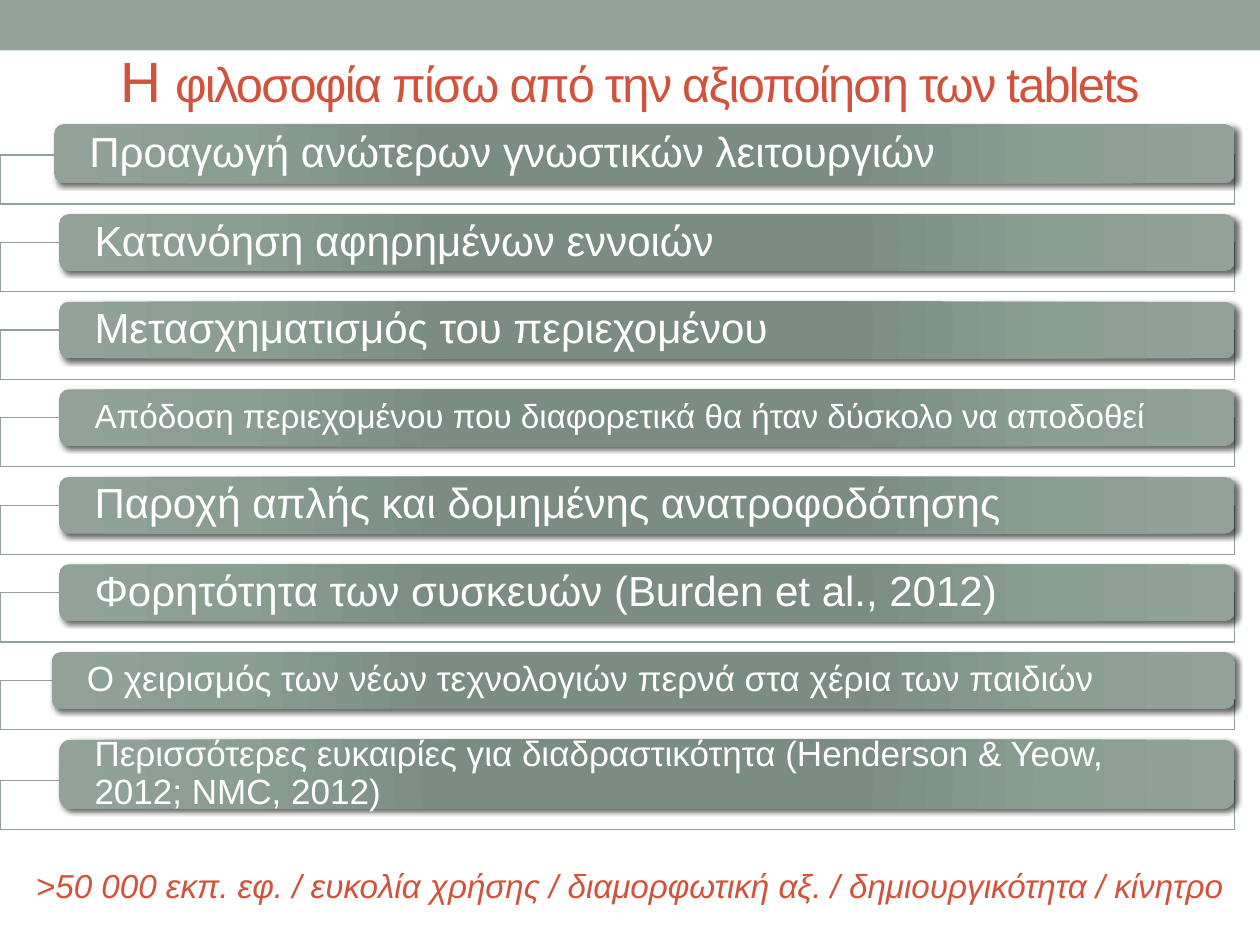
from lxml import etree
from pptx import Presentation
from pptx.dml.color import RGBColor
from pptx.enum.shapes import MSO_SHAPE as SHAPE
from pptx.enum.text import MSO_ANCHOR as ANCHOR, PP_ALIGN as ALIGN
from pptx.oxml import parse_xml
from pptx.oxml.ns import qn
from pptx.util import Inches, Pt

NS = 'xmlns:a="http://schemas.openxmlformats.org/drawingml/2006/main"'
SAGE, RED, WHITE = "93A299", "D2533C", "FFFFFF"
BAR_STOPS = [(0, "7B8E82"), (34, "7B8D83"), (70, "8A9E92"), (100, SAGE)]

PITCH = 0.695
FRAME_H = 0.39
OVERLAP = 0.225  # how far each bar reaches into its frame
LABEL_PAD = 0.02

# text, size, bar left, bar height, extra drop of the row
ROWS = [
    ("Προαγωγή ανώτερων γνωστικών λειτουργιών", 24, 0.43, 0.47, 0),
    ("Κατανόηση αφηρημένων εννοιών", 24, 0.47, 0.45, 0),
    ("Μετασχηματισμός του περιεχομένου", 24, 0.47, 0.45, 0),
    ("Απόδοση περιεχομένου που διαφορετικά θα ήταν δύσκολο να αποδοθεί", 19, 0.47, 0.45, 0),
    ("Παροχή απλής και δομημένης ανατροφοδότησης", 24, 0.47, 0.45, 0),
    ("Φορητότητα των συσκευών (Burden et al., 2012)", 24, 0.47, 0.45, 0),
    ("Ο χειρισμός των νέων τεχνολογιών περνά στα χέρια των παιδιών", 20, 0.41, 0.45, 0),
    ("Περισσότερες ευκαιρίες για διαδραστικότητα (Henderson & Yeow, 2012; NMC, 2012)",
     20, 0.47, 0.55, 0.1),
]


def rgb(color):
    return RGBColor.from_string(color)


def add_box(slide, kind, left, top, width, height, fill, line=None):
    sp = slide.shapes.add_shape(kind, Inches(left), Inches(top), Inches(width), Inches(height))
    sp.shadow.inherit = False
    sp.fill.solid()
    sp.fill.fore_color.rgb = rgb(fill)
    if line:
        sp.line.color.rgb = rgb(line)
        sp.line.width = Pt(0.75)
    else:
        sp.line.fill.background()
    return sp


def add_text(slide, left, top, width, height, runs, color=WHITE, align=ALIGN.LEFT,
             anchor=ANCHOR.MIDDLE, insets=(0.1, 0.05), italic=False, spacing=None, line=None):
    """Add one paragraph; runs is a list of (text, size) pairs."""
    sp = slide.shapes.add_textbox(Inches(left), Inches(top), Inches(width), Inches(height))
    tf = sp.text_frame
    tf.word_wrap = True
    tf.vertical_anchor = anchor
    tf.margin_left = tf.margin_right = Inches(insets[0])
    tf.margin_top = tf.margin_bottom = Inches(insets[1])
    p = tf.paragraphs[0]
    p.alignment = align
    if line:
        p.line_spacing = line
    for text, size in runs:
        r = p.add_run()
        r.text = text
        r.font.name = "Arial"
        r.font.size = Pt(size)
        r.font.italic = italic
        r.font.color.rgb = rgb(color)
        if spacing:
            r.font._element.set("spc", str(int(spacing * 100)))


def style_bar(sp):
    """Give the bar its radial gradient and soft shadow."""
    stops = "".join(f'<a:gs pos="{pos * 1000}"><a:srgbClr val="{color}"/></a:gs>'
                    for pos, color in BAR_STOPS)
    gradient = parse_xml(
        f'<a:gradFill {NS} rotWithShape="1"><a:gsLst>{stops}</a:gsLst><a:path path="circle">'
        '<a:fillToRect l="100000" t="100000" r="100000" b="100000"/></a:path></a:gradFill>')
    props = sp._element.spPr
    props.replace(props.find(qn("a:solidFill")), gradient)
    shadow = parse_xml(
        f'<a:outerShdw {NS} blurRad="{Pt(3)}" dist="{Pt(2)}" dir="2700000" rotWithShape="0">'
        '<a:srgbClr val="000000"><a:alpha val="60000"/></a:srgbClr></a:outerShdw>')
    props.find(qn("a:effectLst")).append(shadow)


def add_row(slide, left, top, width, text, size, bar_left, bar_h):
    frame = add_box(slide, SHAPE.RECTANGLE, left, top, width, FRAME_H, WHITE, SAGE)
    white = frame._element.spPr.find(qn("a:solidFill"))[0]
    etree.SubElement(white, qn("a:alpha")).set("val", "90000")

    bar_top = top + OVERLAP - bar_h
    bar_w = width - bar_left
    style_bar(add_box(slide, SHAPE.ROUNDED_RECTANGLE, left + bar_left, bar_top,
                      bar_w, bar_h, SAGE))
    add_text(slide, left + bar_left + LABEL_PAD, bar_top + LABEL_PAD,
             bar_w - 2 * LABEL_PAD, bar_h - 2 * LABEL_PAD, [(text, size)],
             insets=(0.26, 0), line=0.9)


def add_list(slide, left, top, width):
    for i, (text, size, bar_left, bar_h, drop) in enumerate(ROWS):
        add_row(slide, left, top + i * PITCH + drop, width, text, size, bar_left, bar_h)


def add_header(slide, left, top, width):
    add_box(slide, SHAPE.RECTANGLE, left, top, width, 0.4, SAGE)
    add_text(slide, left + 0.5, top + 0.36, width - 1, 0.55,
             [("Η ", 32.4), ("φιλοσοφία πίσω από την αξιοποίηση των tablets", 27.9)],
             color=RED, align=ALIGN.CENTER, spacing=-1)


def add_footer(slide, left, top, width, height):
    add_text(slide, left, top, width, height,
             [(">50 000 εκπ. εφ. / ευκολία χρήσης / διαμορφωτική αξ. / "
               "δημιουργικότητα / κίνητρο", 19)],
             color=RED, align=ALIGN.CENTER, anchor=ANCHOR.TOP, italic=True)


def main():
    prs = Presentation()
    prs.slide_width, prs.slide_height = Inches(10), Inches(7.5)
    slide = prs.slides.add_slide(prs.slide_layouts[6])
    add_header(slide, 0, 0, 10)
    add_footer(slide, 0, 6.82, 10, 0.68)
    add_list(slide, 0, 1.23, 9.8)
    prs.save("out.pptx")


if __name__ == "__main__":
    main()
